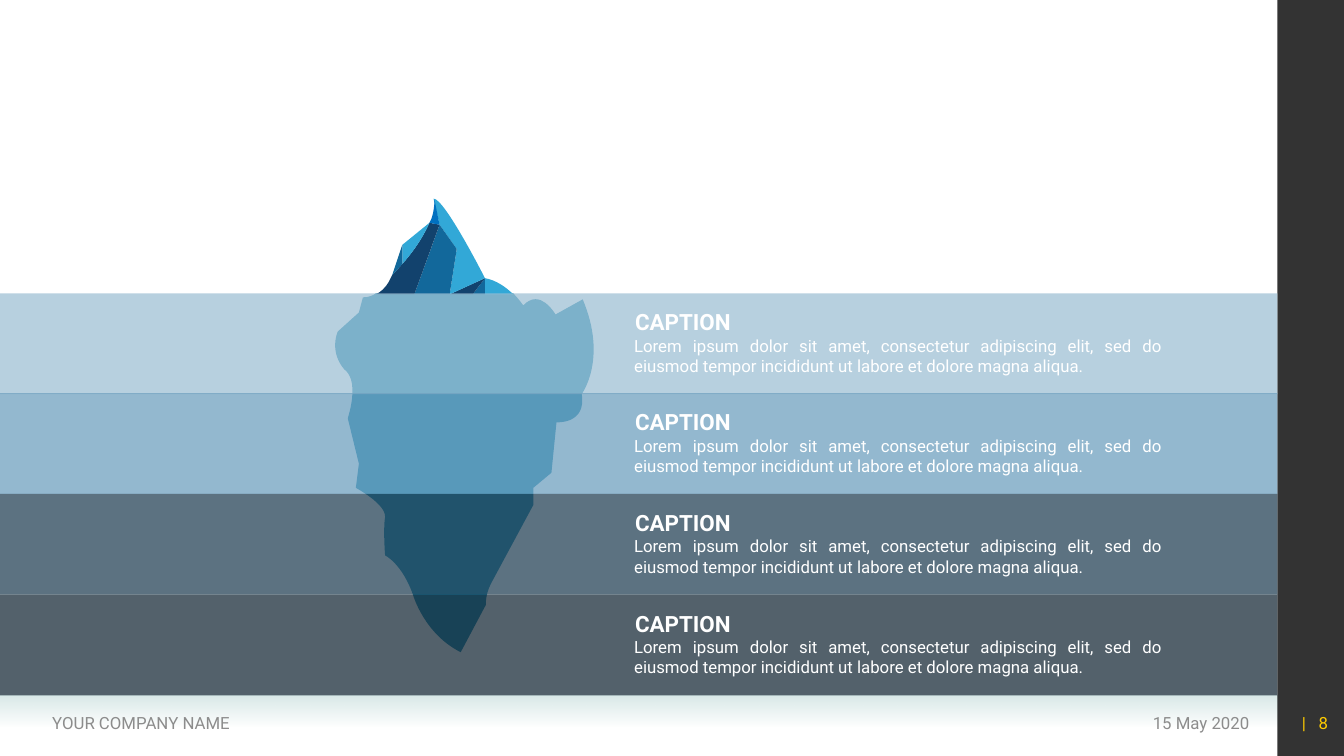
from dataclasses import dataclass

from lxml.etree import SubElement
from pptx import Presentation
from pptx.dml.color import RGBColor
from pptx.enum.shapes import MSO_SHAPE as Preset
from pptx.enum.text import MSO_ANCHOR as Anchor, MSO_AUTO_SIZE as AutoSize, PP_ALIGN as Align
from pptx.oxml.ns import qn
from pptx.util import Pt

PX = 9144  # EMU per px, 100 px to the inch
SLIDE_W, SLIDE_H = 1333, 750
PAGE_W = 1267
SEA_TOP, SEA_H, BAND_H = 291, 399, 100


@dataclass(frozen=True)
class Theme:
    font: str = "Roboto"
    caption_pt: int = 16
    text_pt: int = 12
    white: str = "FFFFFF"
    footer: str = "8C8C8C"
    page_number: str = "FFCC00"
    sidebar: str = "000000"
    haze: str = "D9E9E8"
    submerged: str = "1482AB"
    light: str = "32A8D7"
    middle: str = "12689B"
    dark: str = "12426D"
    bright: str = "0070C0"
    bands: tuple = ("A0C1D5", "70A1C0", "264457", "1A2D3A")


THEME = Theme()
BODY = ("Lorem ipsum dolor sit amet, consectetur adipiscing elit, sed do "
        "eiusmod tempor incididunt ut labore et dolore magna aliqua.")

# Outlines: a start point, then (x, y) for a line or six numbers for a curve
SUBMERGED = [
    (578, 297), (603, 356, 577, 391, 577, 391), (582, 421, 552, 419, 552, 419),
    (547, 469), (529, 484), (529, 501), (487, 579),
    (481, 591, 482, 600, 482, 600), (457, 647),
    (421, 629, 410, 591, 410, 591), (399, 559, 382, 551, 382, 551),
    (382, 551, 380, 525, 382, 513), (383, 500, 353, 484, 353, 484),
    (356, 460), (345, 415), (357, 375, 342, 367, 342, 367),
    (326, 349, 335, 329, 335, 329), (356, 310), (360, 295),
    (366, 295, 370, 293, 373, 291), (509, 291),
    (515, 297, 519, 303, 519, 303), (536, 285, 551, 312, 551, 312),
]
FACETS = [
    (THEME.light, [(509, 292), (481, 292), (481, 276), (492, 278, 502, 285, 509, 292)]),
    (THEME.middle, [(481, 276), (481, 292), (469, 292)]),
    (THEME.dark, [(481, 276), (469, 292), (446, 292)]),
    (THEME.light, [(481, 276), (446, 292), (453, 247), (436, 223), (430, 197),
                   (441, 197, 481, 276, 481, 276)]),
    (THEME.middle, [(436, 223), (453, 247), (446, 292), (411, 292)]),
    (THEME.dark, [(436, 223), (411, 292), (373, 292), (383, 287, 387, 277, 387, 277),
                  (389, 273), (389, 273, 393, 269, 399, 262),
                  (407, 253, 418, 239, 426, 221)]),
    (THEME.bright, [(431, 198), (436, 223), (426, 221), (431, 213, 431, 198, 431, 198)]),
    (THEME.light, [(399, 243), (426, 221), (418, 239, 407, 253, 399, 262)]),
    (THEME.middle, [(399, 243), (399, 262), (393, 269, 389, 273, 389, 273)]),
]


def emu(*lengths):
    return [length * PX for length in lengths]


def set_alpha(color_element, percent):
    SubElement(color_element, qn("a:alpha")).set("val", str(percent * 1000))


def paint(shape, color, opacity=100):
    shape.shadow.inherit = False
    shape.line.fill.background()
    shape.fill.solid()
    shape.fill.fore_color.rgb = RGBColor.from_string(color)
    if opacity < 100:
        set_alpha(shape._element.spPr.find(".//" + qn("a:srgbClr")), opacity)


def add_block(shapes, box, color, opacity=100):
    block = shapes.add_shape(Preset.RECTANGLE, *emu(*box))
    paint(block, color, opacity)
    return block


def add_haze(shapes, box):
    haze = add_block(shapes, box, THEME.haze)
    haze.fill.gradient()
    haze.fill.gradient_angle = 270
    for stop in haze.fill.gradient_stops:
        stop.color.rgb = RGBColor.from_string(THEME.haze)
    set_alpha(haze._element.spPr.findall(".//" + qn("a:srgbClr"))[-1], 0)


def bend(outline_shape, segments):
    """Join the three lines through each curve's points into one Bézier."""
    lines = iter(outline_shape._element.spPr.findall(".//" + qn("a:lnTo")))
    for segment in segments:
        curve = next(lines)
        if len(segment) == 6:
            curve.tag = qn("a:cubicBezTo")
            for extra in (next(lines), next(lines)):
                curve.append(extra[0])
                extra.getparent().remove(extra)


def add_outline(shapes, outline, color):
    start, *segments = outline
    points = [segment[i:i + 2] for segment in segments
              for i in range(0, len(segment), 2)]
    builder = shapes.build_freeform(*start, scale=PX)
    builder.add_line_segments(points, close=True)
    outline_shape = builder.convert_to_shape()
    bend(outline_shape, segments)
    paint(outline_shape, color)


def add_text(shapes, box, runs, color, size=THEME.text_pt, bold=False,
             align=Align.LEFT, anchor=Anchor.MIDDLE):
    """Each run is its text and its letter spacing in points."""
    label = shapes.add_textbox(*emu(*box))
    frame = label.text_frame
    frame.word_wrap = True
    frame.vertical_anchor = anchor
    paragraph = frame.paragraphs[0]
    paragraph.alignment = align
    for text, spacing in runs:
        run = paragraph.add_run()
        run.text = text
        run.font.name = THEME.font
        run.font.size = Pt(size)
        run.font.bold = bold
        run.font.color.rgb = RGBColor.from_string(color)
        if spacing:
            run._r.get_or_add_rPr().set("spc", str(spacing * 100))
    return frame


def add_level(shapes, top):
    caption = add_text(shapes, (620, top + 10, 533, 37), [("CAPTION", 0)],
                       THEME.white, THEME.caption_pt, bold=True)
    body = add_text(shapes, (618, top + 37, 546, 51), [(BODY, 0)], THEME.white,
                    align=Align.JUSTIFY, anchor=Anchor.TOP)
    body.margin_left, body.margin_right = emu(11, 11)
    body.paragraphs[0].space_before = Pt(THEME.text_pt * 0.2)
    for frame in (caption, body):
        frame.auto_size = AutoSize.SHAPE_TO_FIT_TEXT


def add_page_frame(shapes):
    add_haze(shapes, (0, 690, PAGE_W, 31))
    add_block(shapes, (PAGE_W, 0, SLIDE_W - PAGE_W, SLIDE_H), THEME.sidebar, 80)
    add_text(shapes, (910, 697, 339, 40), [("15 May 2020", 0)], THEME.footer,
             align=Align.RIGHT)
    add_text(shapes, (42, 697, 490, 40), [("YOUR COMPANY NAME", 0)], THEME.footer)
    add_text(shapes, (1260, 697, 67, 40), [("| ", 3), ("8", 0)], THEME.page_number,
             align=Align.RIGHT)


def main():
    deck = Presentation()
    deck.slide_width, deck.slide_height = emu(SLIDE_W, SLIDE_H)
    shapes = deck.slides.add_slide(deck.slide_layouts[6]).shapes

    # Footer and sidebar
    add_page_frame(shapes)

    # Iceberg: body below the water, faceted tip above
    add_outline(shapes, SUBMERGED, THEME.submerged)
    tip = shapes.add_group_shape()
    for color, outline in FACETS:
        add_outline(tip.shapes, outline, color)

    # Water bands, then their captions
    levels = len(THEME.bands)
    tops = [SEA_TOP + SEA_H * level // levels for level in range(levels)]
    for top, color in zip(tops, THEME.bands):
        add_block(shapes, (0, top, PAGE_W, BAND_H), color, 75)
    for top in tops:
        add_level(shapes, top)

    deck.save("out.pptx")


if __name__ == "__main__":
    main()
